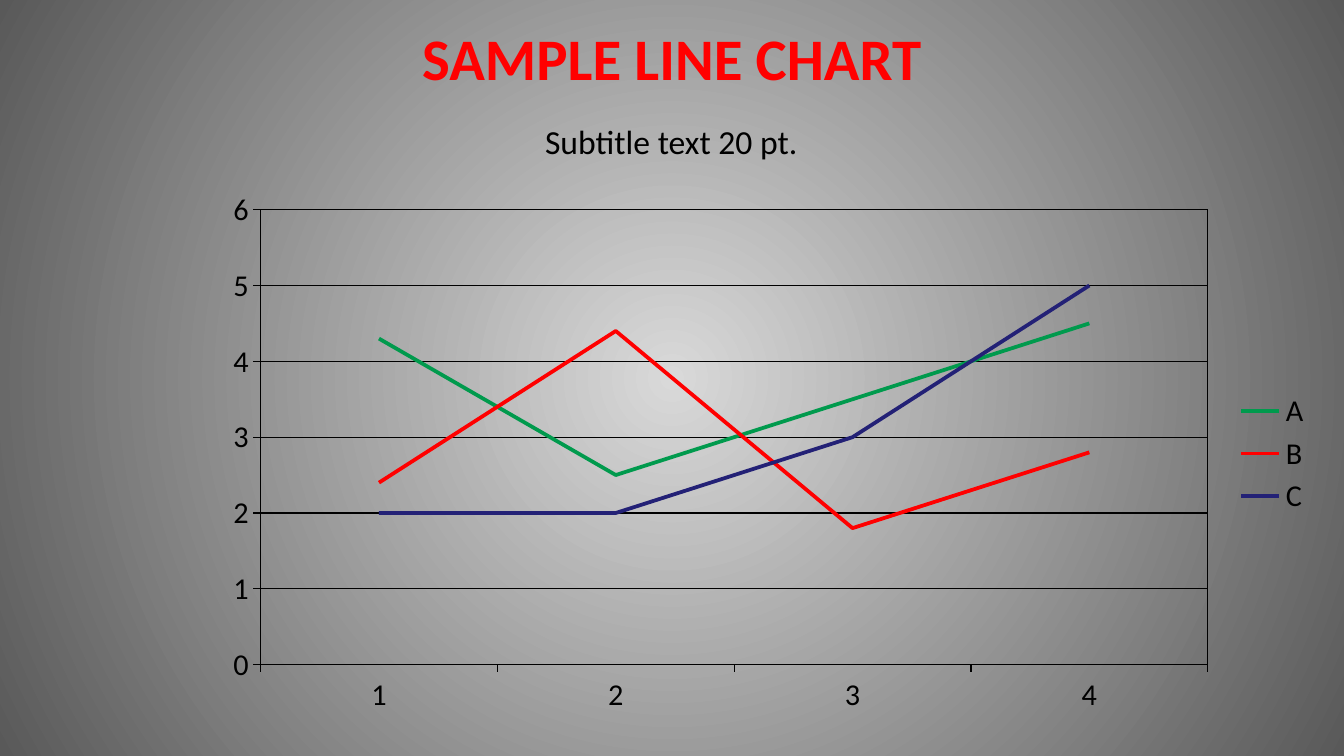
from dataclasses import dataclass

from lxml import etree
from pptx import Presentation
from pptx import util as u
from pptx.chart import data as chart_data
from pptx.dml.color import RGBColor
from pptx.enum import chart as chart_enum, text
from pptx.oxml import ns, parse_xml

FONT = "Calibri"
BLACK = RGBColor(0x00, 0x00, 0x00)
RED = RGBColor(0xFF, 0x00, 0x00)
GREEN = RGBColor(0x00, 0x9A, 0x4D)
NAVY = RGBColor(0x23, 0x21, 0x76)
LIGHT_GRAY = RGBColor(0xD9, 0xD9, 0xD9)
DARK_GRAY = RGBColor(0x59, 0x59, 0x59)


@dataclass(frozen=True)
class Heading:
    wording: str
    left: float
    top: float
    width: float
    height: float
    size: float
    color: RGBColor
    bold: bool
    anchor: text.MSO_ANCHOR
    side_inset: float


@dataclass(frozen=True)
class Trend:
    name: str
    values: tuple[float, ...]
    color: RGBColor


CATEGORIES = ("1", "2", "3", "4")
HEADINGS = (
    Heading("SAMPLE LINE CHART", 0, 0.21, 11.11, 0.59, 35, RED, True,
            text.MSO_ANCHOR.MIDDLE, 0.05),
    Heading("Subtitle text 20 pt.", 0.3, 0.99, 10.5, 4.81, 20, BLACK, False,
            text.MSO_ANCHOR.TOP, 0.1),
)
TRENDS = (
    Trend("A", (4.3, 2.5, 3.5, 4.5), GREEN),
    Trend("B", (2.4, 4.4, 1.8, 2.8), RED),
    Trend("C", (2, 2, 3, 5), NAVY),
)
PLOT_LAYOUT = {"x": 0.044, "y": 0.052, "w": 0.852, "h": 0.836}


def paint_background(page) -> None:
    fill = page.background.fill
    fill.gradient()
    for stop, position, color in zip(fill.gradient_stops, (0, 1), (LIGHT_GRAY, DARK_GRAY)):
        stop.position = position
        stop.color.rgb = color
    gradient = next(page.element.iter(ns.qn("a:gradFill")))
    linear = gradient.find(ns.qn("a:lin"))
    circle = etree.Element(ns.qn("a:path"), {"path": "circle"})
    etree.SubElement(circle, ns.qn("a:fillToRect"), dict.fromkeys("ltrb", "50000"))
    gradient.replace(linear, circle)


def add_heading(page, heading: Heading) -> None:
    box = page.shapes.add_textbox(
        *map(u.Inches, (heading.left, heading.top, heading.width, heading.height)))
    frame = box.text_frame
    frame.word_wrap = True
    frame.vertical_anchor = heading.anchor
    frame.margin_left = frame.margin_right = u.Inches(heading.side_inset)
    frame.margin_top = frame.margin_bottom = u.Inches(0.05)
    para = frame.paragraphs[0]
    para.text = heading.wording
    para.alignment = text.PP_ALIGN.CENTER
    para.line_spacing = 0.9
    set_font(para.font, heading.size, heading.color)
    para.font.bold = heading.bold


def set_font(font, size: float, color: RGBColor) -> None:
    font.name = FONT
    font.size = u.Pt(size)
    font.color.rgb = color


def set_line(line, color: RGBColor, width: float) -> None:
    line.color.rgb = color
    line.width = u.Pt(width)


def frame_plot(chart) -> None:
    plot_area = next(chart.element.iter(ns.qn("c:plotArea")))
    for layout in plot_area.findall(ns.qn("c:layout")):
        plot_area.remove(layout)
    layout = etree.Element(ns.qn("c:layout"))
    manual = etree.SubElement(layout, ns.qn("c:manualLayout"))
    settings = {"layoutTarget": "inner", "xMode": "edge", "yMode": "edge", **PLOT_LAYOUT}
    for name, value in settings.items():
        etree.SubElement(manual, ns.qn(f"c:{name}"), val=str(value))
    plot_area.insert(0, layout)
    plot_area.append(parse_xml(
        f'<c:spPr {ns.nsdecls("c", "a")}><a:noFill/><a:ln w="{u.Pt(0.75)}">'
        f'<a:solidFill><a:srgbClr val="{BLACK}"/></a:solidFill></a:ln></c:spPr>'))


def add_line_chart(page) -> None:
    figures = chart_data.CategoryChartData()
    figures.categories = CATEGORIES
    for trend in TRENDS:
        figures.add_series(trend.name, trend.values)
    chart = page.shapes.add_chart(
        chart_enum.XL_CHART_TYPE.LINE, u.Inches(1.75), u.Inches(1.5),
        u.Inches(9.19), u.Inches(4.5), figures).chart
    chart.has_title = False
    set_font(chart.font, 18, BLACK)
    chart.has_legend = True
    chart.legend.position = chart_enum.XL_LEGEND_POSITION.RIGHT
    chart.legend.include_in_layout = False
    set_font(chart.legend.font, 18, BLACK)
    for axis in (chart.category_axis, chart.value_axis):
        axis.major_tick_mark = chart_enum.XL_TICK_MARK.OUTSIDE
        axis.minor_tick_mark = chart_enum.XL_TICK_MARK.NONE
        set_font(axis.tick_labels.font, 18, BLACK)
        set_line(axis.format.line, BLACK, 0.75)
    scale = chart.value_axis
    scale.minimum_scale, scale.maximum_scale, scale.major_unit = 0, 6, 1
    scale.has_major_gridlines = True
    set_line(scale.major_gridlines.format.line, BLACK, 0.75)
    plot = chart.plots[0]
    plot.vary_by_categories = False
    for series, trend in zip(plot.series, TRENDS):
        series.smooth = False
        series.marker.style = chart_enum.XL_MARKER_STYLE.NONE
        set_line(series.format.line, trend.color, 2.25)
    frame_plot(chart)


def main() -> None:
    deck = Presentation()
    deck.slide_width, deck.slide_height = u.Inches(11.11), u.Inches(6.25)
    page = deck.slides.add_slide(deck.slide_layouts[6])
    paint_background(page)
    for heading in HEADINGS:
        add_heading(page, heading)
    add_line_chart(page)
    deck.save("out.pptx")


if __name__ == "__main__":
    main()
